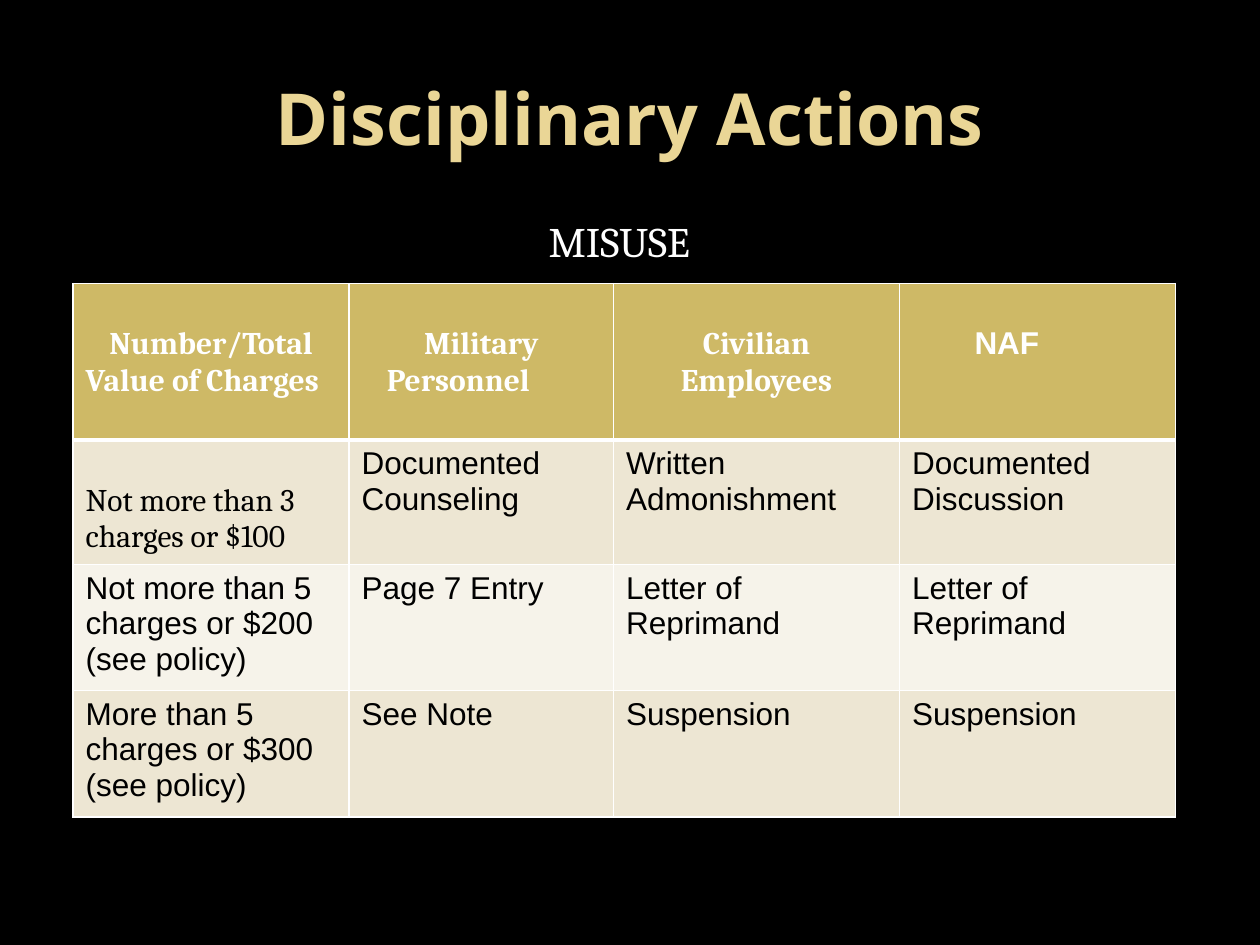
import dataclasses

import lxml.etree
import pptx
import pptx.dml.color
import pptx.enum.text
import pptx.oxml.ns
import pptx.util

ALIGN = pptx.enum.text.PP_ALIGN
MIDDLE = pptx.enum.text.MSO_ANCHOR.MIDDLE


@dataclasses.dataclass(frozen=True)
class Theme:
    background: str = "000000"
    title: str = "EAD696"
    light: str = "FFFFFF"
    dark: str = "000000"
    header: str = "CEB966"
    bands: tuple = ("EDE6D3", "F6F3EA")
    title_font: str = "Noto Sans"
    serif: str = "Cambria"
    sans: str = "Arial"
    title_size: int = 41
    subtitle_size: int = 24
    table_size: int = 18
    thin: int = 1
    thick: int = 3


THEME = Theme()
WIDTH, HEIGHT = pptx.util.Inches(10), pptx.util.Inches(7.5)

# Boxes: left, top, width, height as shares of the slide
TITLE_BOX = (0.05, 0.04, 0.9, 0.1667)
SUBTITLE_BOX = (0.05, 0.2, 0.883, 0.11)
TABLE_BOX = (0.058, 0.3, 0.875, 0.546)
COLUMN_SHARES = (2.19, 2.1, 2.27, 2.19)
ROW_SHARES = (1.24, 0.97, 0.94, 0.94)
DROPPED_TOP = pptx.util.Inches(0.34)

# A trailing tab pushes the last line of a heading to the left
HEADINGS = (
    ("Number/Total Value of Charges \t", THEME.serif),
    ("Military Personnel\t", THEME.serif),
    ("Civilian Employees", THEME.serif),
    ("NAF \t", THEME.sans),
)
ACTIONS = (
    ("Not more than 3 charges or $100", "Documented Counseling",
     "Written Admonishment", "Documented Discussion"),
    ("Not more than 5 charges or $200\n(see policy)", "Page 7 Entry",
     "Letter of Reprimand", "Letter of Reprimand"),
    ("More than 5 charges or $300\n(see policy)", "See Note",
     "Suspension", "Suspension"),
)


def color(value):
    return pptx.dml.color.RGBColor.from_string(value)


def to_lengths(box):
    left, top, width, height = box
    return (int(left * WIDTH), int(top * HEIGHT),
            int(width * WIDTH), int(height * HEIGHT))


def write(text_frame, text, font, size, text_color, align, bold=False):
    text_frame.text = text
    text_frame.word_wrap = True
    for paragraph in text_frame.paragraphs:
        paragraph.alignment = align
        paragraph.font.name = font
        paragraph.font.size = pptx.util.Pt(size)
        paragraph.font.bold = bold
        paragraph.font.color.rgb = color(text_color)


def set_borders(cell, top=THEME.thin, bottom=THEME.thin):
    properties = cell._tc.get_or_add_tcPr()
    qn = pptx.oxml.ns.qn
    sides = (("L", THEME.thin), ("R", THEME.thin), ("T", top), ("B", bottom))
    for index, (side, points) in enumerate(sides):
        line = lxml.etree.Element(qn(f"a:ln{side}"), w=str(pptx.util.Pt(points)))
        fill = lxml.etree.SubElement(line, qn("a:solidFill"))
        lxml.etree.SubElement(fill, qn("a:srgbClr"), val=THEME.light)
        properties.insert(index, line)


def place_title(slide, box):
    title = slide.shapes.title
    title.left, title.top, title.width, title.height = to_lengths(box)
    title.text_frame.vertical_anchor = MIDDLE
    write(title.text_frame, "Disciplinary Actions", THEME.title_font,
          THEME.title_size, THEME.title, ALIGN.CENTER, bold=True)


def place_subtitle(slide, box):
    text_frame = slide.shapes.add_textbox(*to_lengths(box)).text_frame
    text_frame.vertical_anchor = MIDDLE
    write(text_frame, "MISUSE", THEME.serif, THEME.subtitle_size,
          THEME.light, ALIGN.CENTER)


def place_actions_table(slide, box):
    left, top, width, height = to_lengths(box)
    table = slide.shapes.add_table(
        len(ROW_SHARES), len(COLUMN_SHARES), left, top, width, height).table
    for column, share in zip(table.columns, COLUMN_SHARES):
        column.width = int(width * share / sum(COLUMN_SHARES))
    for row, share in zip(table.rows, ROW_SHARES):
        row.height = int(height * share / sum(ROW_SHARES))

    for column_index, (text, font) in enumerate(HEADINGS):
        cell = table.cell(0, column_index)
        cell.fill.solid()
        cell.fill.fore_color.rgb = color(THEME.header)
        cell.margin_top = DROPPED_TOP
        write(cell.text_frame, text, font, THEME.table_size,
              THEME.light, ALIGN.CENTER, bold=True)
        set_borders(cell, bottom=THEME.thick)

    for row_index, texts in enumerate(ACTIONS, start=1):
        for column_index, text in enumerate(texts):
            cell = table.cell(row_index, column_index)
            cell.fill.solid()
            cell.fill.fore_color.rgb = color(THEME.bands[(row_index - 1) % 2])
            write(cell.text_frame, text, THEME.sans, THEME.table_size,
                  THEME.dark, ALIGN.LEFT)
            set_borders(cell, top=THEME.thick if row_index == 1 else THEME.thin)

    first_charge = table.cell(1, 0)
    first_charge.margin_top = DROPPED_TOP
    first_charge.text_frame.paragraphs[0].font.name = THEME.serif


def main():
    presentation = pptx.Presentation()
    presentation.slide_width, presentation.slide_height = WIDTH, HEIGHT
    title_only = presentation.slide_layouts.get_by_name("Title Only")
    slide = presentation.slides.add_slide(title_only)
    slide.background.fill.solid()
    slide.background.fill.fore_color.rgb = color(THEME.background)
    place_title(slide, TITLE_BOX)
    place_subtitle(slide, SUBTITLE_BOX)
    place_actions_table(slide, TABLE_BOX)
    presentation.save("out.pptx")


if __name__ == "__main__":
    main()
